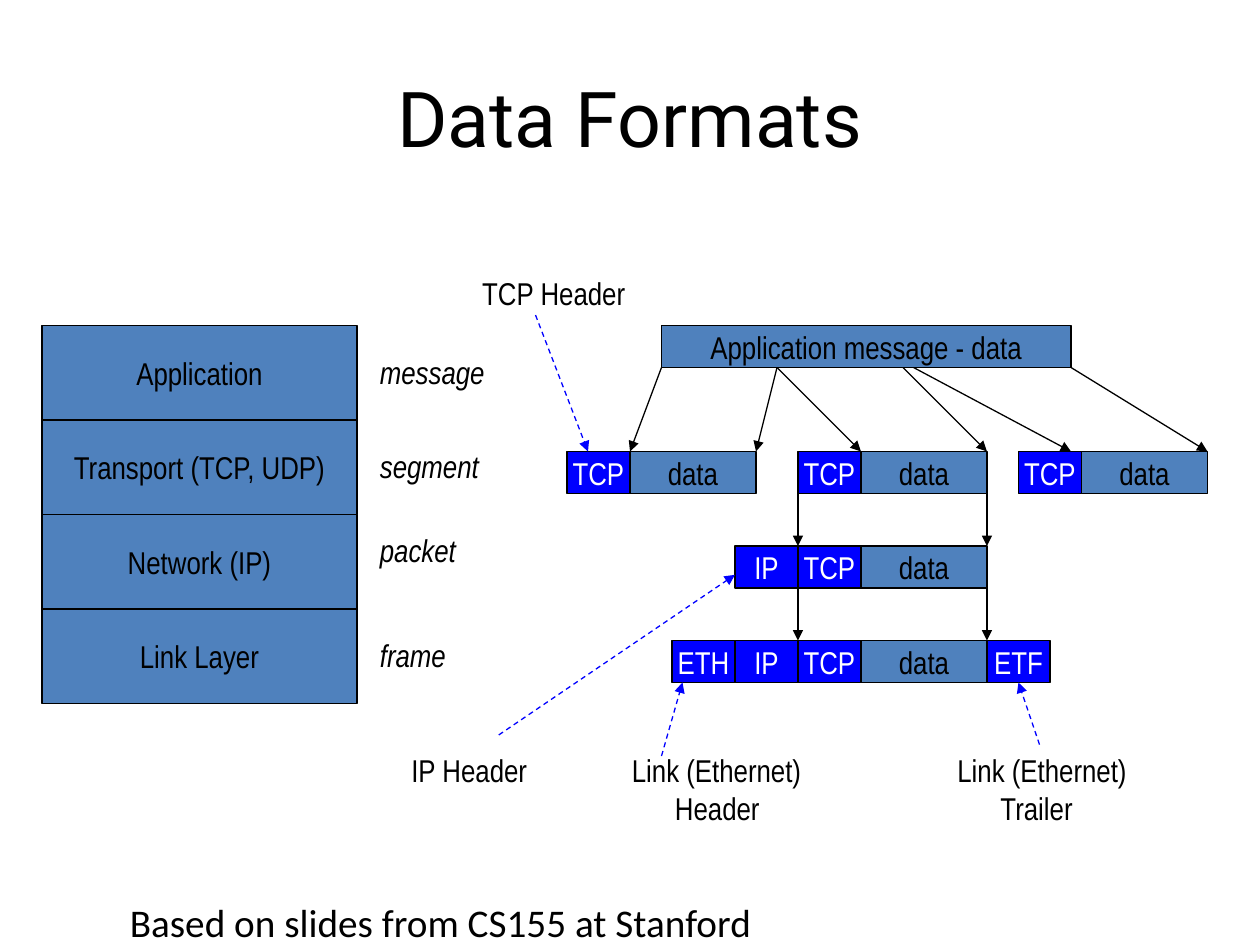
import pptx
import pptx.util
import pptx.dml.color
import pptx.enum.dml
import pptx.enum.shapes
import pptx.enum.text
import pptx.oxml
import pptx.oxml.ns

Pt = pptx.util.Pt
RGB = pptx.dml.color.RGBColor
ALIGN = pptx.enum.text.PP_ALIGN
ANCHOR = pptx.enum.text.MSO_ANCHOR
FIT = pptx.enum.text.MSO_AUTO_SIZE


class Theme:
    black = RGB(0x00, 0x00, 0x00)
    white = RGB(0xFF, 0xFF, 0xFF)
    steel = RGB(0x4F, 0x81, 0xBD)
    blue = RGB(0x00, 0x00, 0xFF)
    body, title, foot = "Arial Narrow", "Roboto", "Calibri"
    small, large, credit = 18, 44, 22.4
    line = 0.75


deck = pptx.Presentation()
deck.slide_width, deck.slide_height = Pt(720), Pt(540)
slide = deck.slides.add_slide(deck.slide_layouts[6])
shapes = slide.shapes


def write(words, x, y, w, h, fill=None, color=Theme.black, font=Theme.body,
          size=Theme.small, italic=None, align=ALIGN.CENTER,
          anchor=ANCHOR.MIDDLE, wrap=False, fit=FIT.NONE, indent=0):
    """Add a filled rectangle, or a plain text box when there is no fill."""
    place = Pt(x), Pt(y), Pt(w), Pt(h)
    if fill is None:
        shape = shapes.add_textbox(*place)
    else:
        shape = shapes.add_shape(pptx.enum.shapes.MSO_SHAPE.RECTANGLE, *place)
        shape.shadow.inherit = False
        shape.fill.solid()
        shape.fill.fore_color.rgb = fill
        shape.line.color.rgb = Theme.black
        shape.line.width = Pt(Theme.line)
    frame = shape.text_frame
    frame.text = words
    frame.word_wrap = wrap
    frame.auto_size = fit
    frame.vertical_anchor = anchor
    for row, para in enumerate(frame.paragraphs):
        para.alignment = align
        if row and indent:
            para._p.get_or_add_pPr().set("marL", str(Pt(indent)))
        face = para.runs[0].font
        face.name, face.size, face.italic = font, Pt(size), italic
        face.color.rgb = color
    return shape


def arrow(x1, y1, x2, y2, color=Theme.black, dash=False):
    """Add a straight line with an arrowhead at its end."""
    line = shapes.add_connector(pptx.enum.shapes.MSO_CONNECTOR.STRAIGHT,
                                Pt(x1), Pt(y1), Pt(x2), Pt(y2))
    line.line.color.rgb = color
    line.line.width = Pt(Theme.line)
    if dash:
        line.line.dash_style = pptx.enum.dml.MSO_LINE.DASH
    pen = line.line._get_or_add_ln()
    pen.append(pptx.oxml.parse_xml(
        f'<a:tailEnd {pptx.oxml.ns.nsdecls("a")} type="triangle"/>'))
    pen.addnext(pptx.oxml.parse_xml(
        f'<a:effectLst {pptx.oxml.ns.nsdecls("a")}/>'))
    return line


# Title
write("Data Formats", 36, 21.6, 648, 90, font=Theme.title,
      size=Theme.large, wrap=True)

# Layer stack, with the unit name beside each layer
top, step = 186, 54
layers = [("Application", "message", 198, 76),
          ("Transport (TCP, UDP)", "segment", 252, 76),
          ("Network (IP)", "packet", 300, 60),
          ("Link Layer", "frame", 360, 54)]
for i, (layer, unit, y, w) in enumerate(layers):
    write(layer, 24, top + i * step, 180, step, fill=Theme.steel)
    write(unit, 210, y, w, 29, italic=True, align=ALIGN.LEFT,
          anchor=ANCHOR.TOP, fit=FIT.SHAPE_TO_FIT_TEXT)

# Message, then rows of cells: segments, packet, frame
high, head, data = 24, 36, 72
seg, pack, link = 258, 312, 366
write("Application message - data", 378, top, 234, high, fill=Theme.steel)
rows = [(324, seg, ["TCP", "data"]),
        (456, seg, ["TCP", "data"]),
        (582, seg, ["TCP", "data"]),
        (420, pack, ["IP", "TCP", "data"]),
        (384, link, ["ETH", "IP", "TCP", "data", "ETF"])]
for x, y, cells in rows:
    for name in cells:
        if name == "data":
            cell = write(name, x, y, data, high, fill=Theme.steel)
            x += data
        else:
            cell = write(name, x, y, head, high, fill=Theme.blue,
                         color=Theme.white)
            x += head
trailer = cell  # the last cell of the frame

# Message split into segments
for x1, x2 in [(378, 360), (444, 432), (444, 492),
               (516, 564), (522, 612), (612, 690)]:
    arrow(x1, top + high, x2, seg)

# Segment to packet to frame
for x in (456, 564):
    arrow(x, seg + high, x, pack)
    arrow(x, pack + 18, x, link)

# Labels of headers and trailer
for words, x, y, w, h in [("TCP Header", 268.5, 153, 97, 29),
                          ("IP Header", 228, 425.5, 81, 29),
                          ("Link (Ethernet)\nHeader", 354, 425.5, 112, 50.5),
                          ("Link (Ethernet)\nTrailer", 540, 425.5, 112, 50.5)]:
    write(words, x, y, w, h, align=ALIGN.LEFT, anchor=ANCHOR.TOP,
          fit=FIT.SHAPE_TO_FIT_TEXT, indent=24.6)

# Dashed pointers from the labels
for ends in [(306, 180, 336, seg), (285, 420, 420, 328.5),
             (378, 432, 390, link + high), (594, 425.5, 582, link + high)]:
    point = arrow(*ends, color=Theme.blue, dash=True)
point.end_connect(trailer, 2)

# Credit line
write("Based on slides from CS155 at Stanford", 0, 510, 504, 30,
      font=Theme.foot, size=Theme.credit, anchor=ANCHOR.TOP, wrap=True)

deck.save("out.pptx")
